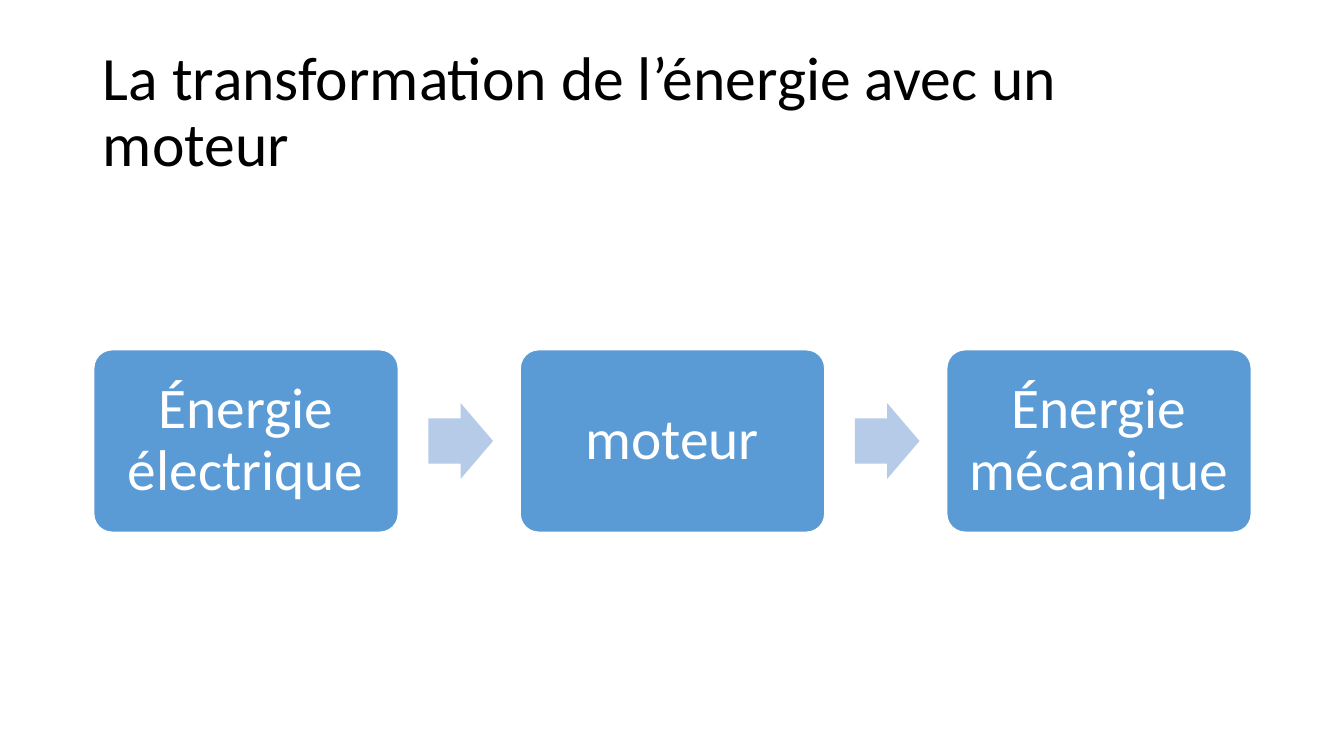
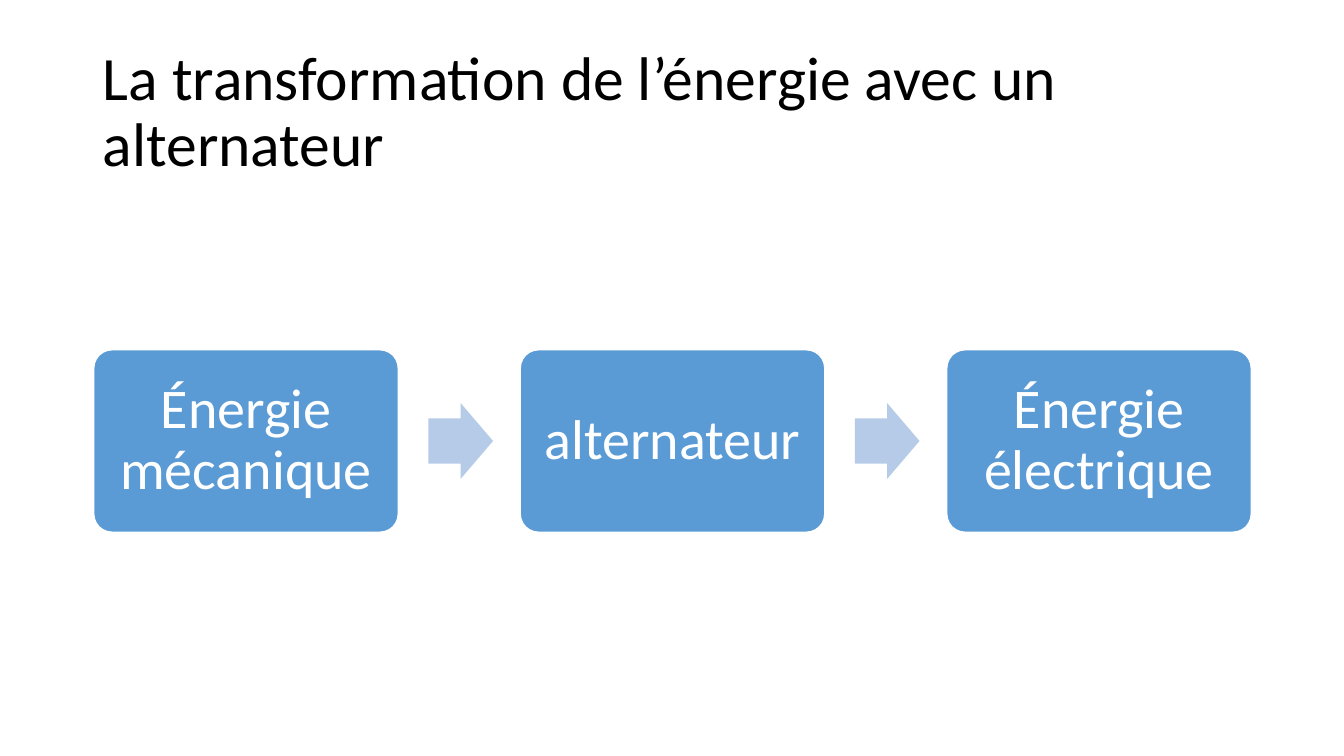
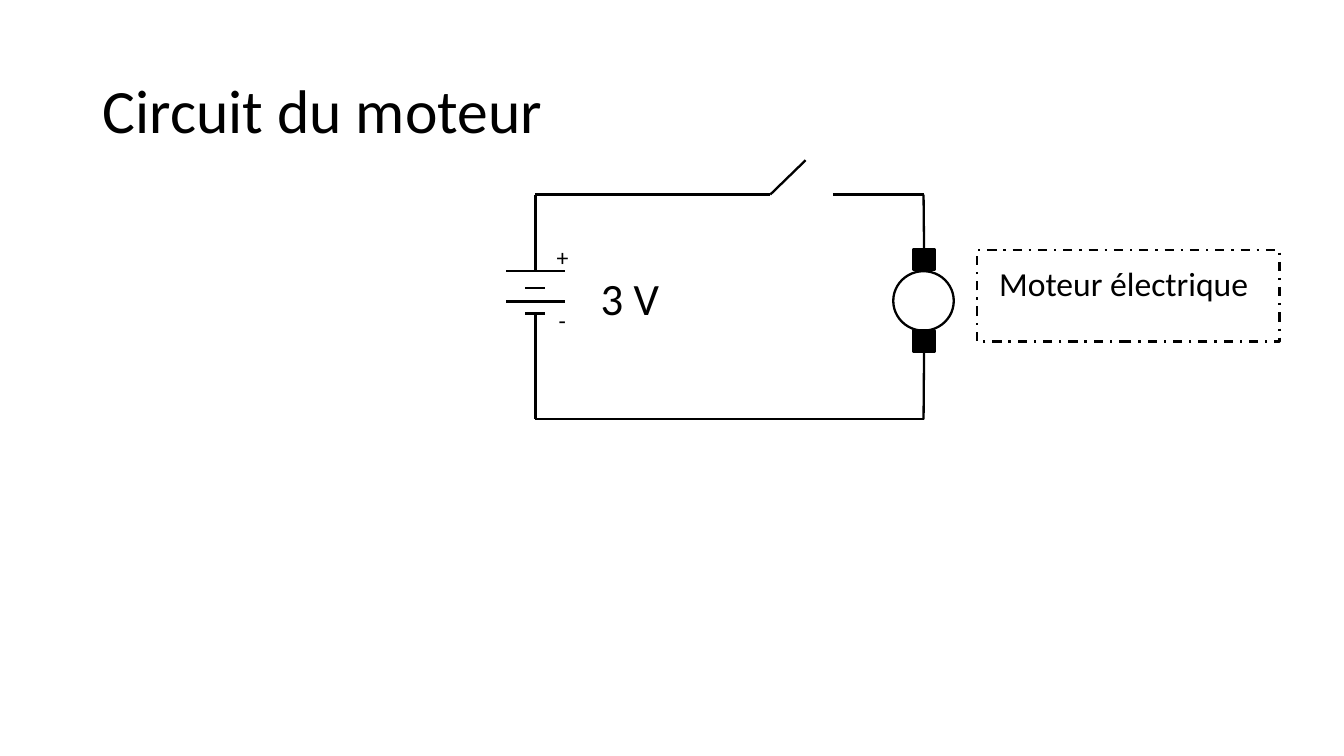
from dataclasses import dataclass

from lxml import etree
from pptx import Presentation
from pptx import util as u
from pptx.dml.color import RGBColor
from pptx.enum import dml, shapes, text
from pptx.oxml.ns import qn


@dataclass(frozen=True)
class Theme:
    font: str = "Calibri"
    ink: str = "000000"
    paper: str = "FFFFFF"
    box: str = "5B9BD5"
    arrow: str = "B5CBE7"
    title: int = 44
    voltage: int = 32
    label: int = 24
    sign: int = 17
    wire: float = 1.63


def write(tf, content, *, size, color, font, align=text.PP_ALIGN.LEFT,
          anchor=text.MSO_ANCHOR.TOP, spacing=1.0, inset=None, wrap=True,
          fit=text.MSO_AUTO_SIZE.NONE):
    tf.word_wrap = wrap
    tf.auto_size = fit
    tf.vertical_anchor = anchor
    if inset is not None:
        tf.margin_left = tf.margin_right = u.Inches(inset)
        tf.margin_top = tf.margin_bottom = u.Inches(inset)
    p = tf.paragraphs[0]
    p.alignment = align
    p.line_spacing = spacing
    r = p.add_run()
    r.text = content
    r.font.name = font
    r.font.size = u.Pt(size)
    r.font.color.rgb = RGBColor.from_string(color)


class Deck:
    """Builds slides in one style and keeps the current slide."""

    def __init__(self, theme):
        self.t = theme
        self.prs = Presentation()
        self.prs.slide_width = u.Inches(13.33)
        self.prs.slide_height = u.Inches(7.5)
        self.s = None

    def slide(self, title):
        self.s = self.prs.slides.add_slide(self.prs.slide_layouts[5])
        sp = self.s.shapes.title
        sp.left, sp.top, sp.width, sp.height = map(u.Inches, (0.92, 0.4, 11.5, 1.45))
        write(sp.text_frame, title, size=self.t.title, color=self.t.ink,
              font=self.t.font, anchor=text.MSO_ANCHOR.MIDDLE, spacing=0.9)

    def shape(self, kind, at, fill=None, line=None, width=1, adj=()):
        sp = self.s.shapes.add_shape(kind, *map(u.Inches, at))
        sp.shadow.inherit = False
        for i, value in enumerate(adj):
            sp.adjustments[i] = value
        for fmt, color in ((sp.fill, fill), (sp.line.fill, line)):
            if color:
                fmt.solid()
                fmt.fore_color.rgb = RGBColor.from_string(color)
            else:
                fmt.background()
        if line:
            sp.line.width = u.Pt(width)
        return sp

    def label(self, at, content, size, inset=None):
        sp = self.s.shapes.add_textbox(*map(u.Inches, at))
        write(sp.text_frame, content, size=size, color=self.t.ink, font=self.t.font,
              inset=inset, wrap=False, fit=text.MSO_AUTO_SIZE.SHAPE_TO_FIT_TEXT)

    def wire(self, start, end):
        cxn = self.s.shapes.add_connector(
            shapes.MSO_CONNECTOR.STRAIGHT, *map(u.Inches, (*start, *end)))
        cxn.line.color.rgb = RGBColor.from_string(self.t.ink)
        cxn.line.width = u.Pt(self.t.wire)
        etree.SubElement(cxn._element.spPr, qn("a:effectLst"))
        return cxn

    def process(self, steps, size):
        left, pitch = 0.93, 4.23
        for i, step in enumerate(steps):
            x = left + i * pitch
            if i:
                self.shape(shapes.MSO_SHAPE.RIGHT_ARROW, (x - 0.91, 4, 0.64, 0.75),
                           fill=self.t.arrow, adj=(0.6, 0.5))
            sp = self.shape(shapes.MSO_SHAPE.ROUNDED_RECTANGLE, (x, 3.47, 3.02, 1.81),
                            fill=self.t.box, line=self.t.paper, adj=(0.1,))
            write(sp.text_frame, step, size=size, color=self.t.paper, font=self.t.font,
                  align=text.PP_ALIGN.CENTER, anchor=text.MSO_ANCHOR.MIDDLE,
                  spacing=0.9, inset=0.17)

    def battery(self, x):
        for y, half in ((2.69, 0.29), (2.86, 0.1), (2.99, 0.29), (3.11, 0.1)):
            self.wire((x - half, y), (x + half, y))
        self.label((5.52, 2.41, 0.25, 0.37), "+", self.t.sign, inset=0)
        self.label((5.54, 3.03, 0.2, 0.37), "-", self.t.sign, inset=0)
        self.label((5.86, 2.64, 0.79, 0.64), "3 V", self.t.voltage)

    def motor(self, x):
        ink, width = self.t.ink, self.t.wire
        self.shape(shapes.MSO_SHAPE.OVAL, (x - 0.3, 2.69, 0.6, 0.59),
                   fill=self.t.paper, line=ink, width=width)
        return [self.shape(shapes.MSO_SHAPE.RECTANGLE, (x - 0.1, y, 0.21, 0.21),
                           fill=ink, line=ink, width=width) for y in (2.47, 3.28)]

    def circuit(self):
        left, right, top, bottom = 5.31, 9.16, 1.93, 4.16
        self.battery(left)
        upper, lower = self.motor(right)
        switch = (7.64, top)
        for start, end in (((left, 2.69), (left, top)), ((left, top), switch),
                           (switch, (7.99, 1.59)), ((8.26, top), (right, top)),
                           ((right, bottom), (left, bottom)),
                           ((left, 3.11), (left, bottom))):
            self.wire(start, end)
        self.wire((right, top), (right, 2.47)).end_connect(upper, 0)
        self.wire((right, bottom), (right, 3.49)).end_connect(lower, 2)
        frame = self.shape(shapes.MSO_SHAPE.RECTANGLE, (9.69, 2.48, 3, 0.91),
                           line=self.t.ink, width=self.t.wire)
        frame.line.dash_style = dml.MSO_LINE.DASH_DOT
        self.label((9.91, 2.61, 2.65, 0.5), "Moteur électrique", self.t.label, inset=0)


def main():
    deck = Deck(Theme())
    electric, mechanical = "Énergie électrique", "Énergie mécanique"
    for steps, size in (((electric, "moteur", mechanical), 41),
                        ((mechanical, "alternateur", electric), 40)):
        deck.slide(f"La transformation de l’énergie avec un {steps[1]}")
        deck.process(steps, size)
    deck.slide("Circuit du moteur")
    deck.circuit()
    deck.prs.save("out.pptx")


if __name__ == "__main__":
    main()
